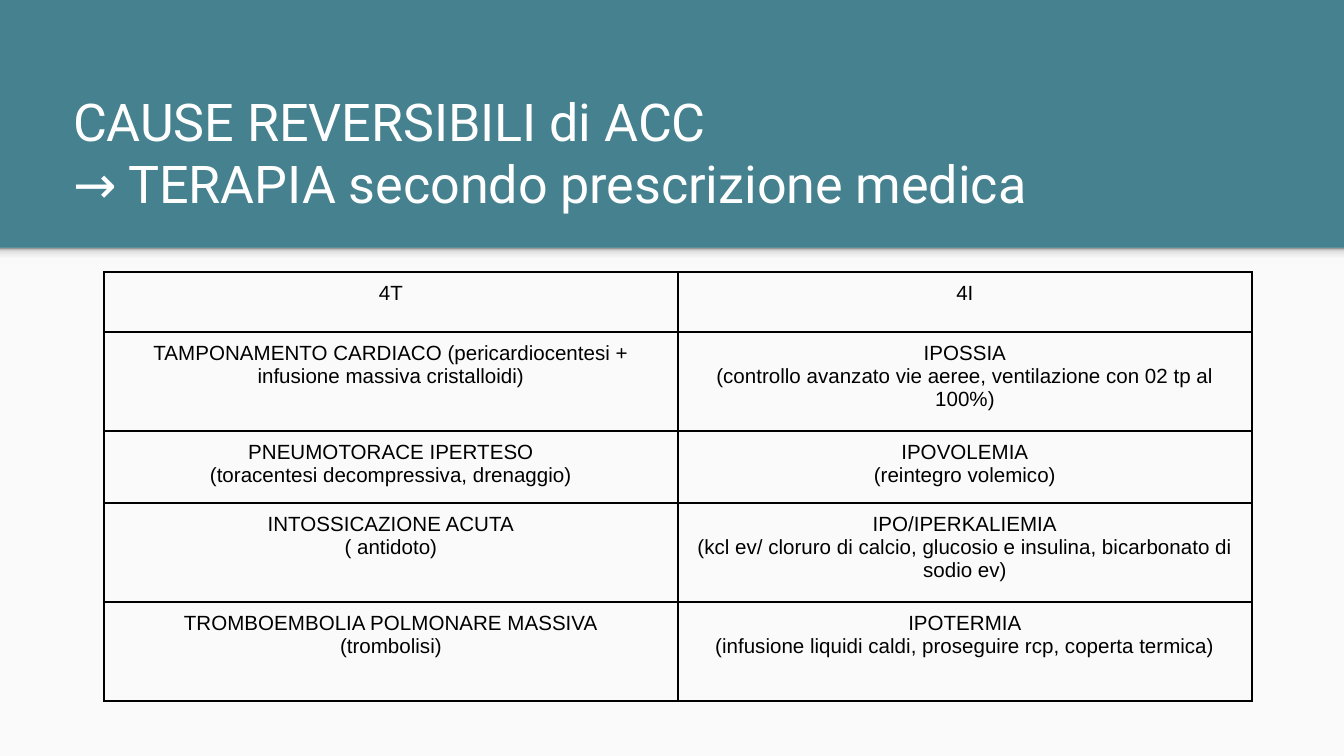
"""Build the slide on reversible causes of cardiac arrest and their therapy."""
from lxml import etree
from pptx import Presentation
from pptx.dml.color import RGBColor
from pptx.enum import shapes, text
from pptx.oxml.ns import qn
from pptx.util import Pt

EMU_PER_PX = 914400 / 134.4
COLOURS = {
    "teal": "45818E",
    "paper": "FAFAFA",
    "white": "FFFFFF",
    "black": "000000",
    "shade_light": "F9F9F9",
    "shade_mid": "DEDEDE",
    "shade_dark": "999999",
}
SHADE_STOPS = [(0, "shade_light"), (36, "shade_light"), (80, "shade_mid"), (100, "shade_dark")]
TITLE = ["CAUSE REVERSIBILI di ACC", "→ TERAPIA secondo prescrizione medica"]
CAUSES = [
    (["4T"], ["4I"]),
    (
        ["TAMPONAMENTO CARDIACO (pericardiocentesi + infusione massiva cristalloidi)"],
        ["IPOSSIA", "(controllo avanzato vie aeree, ventilazione con 02 tp al 100%)"],
    ),
    (
        ["PNEUMOTORACE IPERTESO", "(toracentesi decompressiva, drenaggio)"],
        ["IPOVOLEMIA", "(reintegro volemico)"],
    ),
    (
        ["INTOSSICAZIONE ACUTA", "( antidoto)"],
        [
            "IPO/IPERKALIEMIA",
            "(kcl ev/ cloruro di calcio, glucosio e insulina, bicarbonato di sodio ev)",
        ],
    ),
    (
        ["TROMBOEMBOLIA POLMONARE MASSIVA", "(trombolisi)"],
        ["IPOTERMIA", "(infusione liquidi caldi, proseguire rcp, coperta termica)"],
    ),
]
ROW_HEIGHTS = [60, 99, 72, 99, 99]
COLUMN_WIDTH = 574


def px(length):
    """Turn a length in px into EMU."""
    return round(length * EMU_PER_PX)


def colour(name):
    """Return the named colour."""
    return RGBColor.from_string(COLOURS[name])


def write(frame, lines, *, font, size, ink, align, margin):
    """Write lines as formatted paragraphs with equal margins."""
    frame.text = "\n".join(lines)
    for paragraph in frame.paragraphs:
        paragraph.alignment = align
        paragraph.font.name = font
        paragraph.font.size = Pt(size)
        paragraph.font.bold = False
        paragraph.font.color.rgb = colour(ink)
    for side in ("left", "top", "right", "bottom"):
        setattr(frame, f"margin_{side}", px(margin))


def add_band(slide, top, height):
    """Add a full-width rectangle without outline or shadow."""
    band = slide.shapes.add_shape(
        shapes.MSO_SHAPE.RECTANGLE, 0, px(top), px(1344), px(height)
    )
    band.shadow.inherit = False
    band.line.fill.background()
    return band


def shade(band):
    """Fill a band with the gradient that darkens upwards."""
    band.fill.gradient()
    band.fill.gradient_angle = 90
    stops = band.fill._fill._gradFill.find(qn("a:gsLst"))
    stops.clear()
    for position, name in SHADE_STOPS:
        stop = etree.SubElement(stops, qn("a:gs"), pos=str(position * 1000))
        etree.SubElement(stop, qn("a:srgbClr"), val=COLOURS[name])


def draw_borders(cell):
    """Draw a thin black line on each side of a cell."""
    properties = cell._tc.get_or_add_tcPr()
    for side in ("lnL", "lnR", "lnT", "lnB"):
        border = etree.SubElement(properties, qn(f"a:{side}"), w=str(Pt(1)))
        solid = etree.SubElement(border, qn("a:solidFill"))
        etree.SubElement(solid, qn("a:srgbClr"), val=COLOURS["black"])


def add_causes(slide):
    """Add the table of causes and therapies."""
    causes = slide.shapes.add_table(
        len(CAUSES), 2, px(104), px(272), px(2 * COLUMN_WIDTH), px(sum(ROW_HEIGHTS))
    ).table
    causes.first_row = causes.horz_banding = False
    for column in causes.columns:
        column.width = px(COLUMN_WIDTH)
    for row, height, entries in zip(causes.rows, ROW_HEIGHTS, CAUSES):
        row.height = px(height)
        for cell, lines in zip(row.cells, entries):
            write(cell.text_frame, lines, font="Arial", size=11, ink="black",
                  align=text.PP_ALIGN.CENTER, margin=0)
            cell.margin_left = cell.margin_right = px(10)
            cell.margin_top = cell.margin_bottom = px(10)
            draw_borders(cell)
            cell.fill.background()


def place_title(slide):
    """Move the title placeholder into the header and fill it."""
    title = slide.shapes.title
    title.left, title.top, title.width, title.height = map(px, (60, 114, 1208, 113))
    frame = title.text_frame
    write(frame, TITLE, font="Roboto", size=27.9, ink="white",
          align=text.PP_ALIGN.LEFT, margin=13)
    frame.word_wrap = True
    frame.auto_size = text.MSO_AUTO_SIZE.NONE
    frame.vertical_anchor = text.MSO_ANCHOR.BOTTOM


def main():
    """Build and save the slide."""
    deck = Presentation()
    deck.slide_width, deck.slide_height = px(1344), px(756)
    slide = deck.slides.add_slide(deck.slide_layouts[5])
    slide.background.fill.solid()
    slide.background.fill.fore_color.rgb = colour("teal")
    paper = add_band(slide, 248, 508)
    paper.fill.solid()
    paper.fill.fore_color.rgb = colour("paper")
    shade(add_band(slide, 248, 16))
    place_title(slide)
    add_causes(slide)
    deck.save("out.pptx")


if __name__ == "__main__":
    main()
